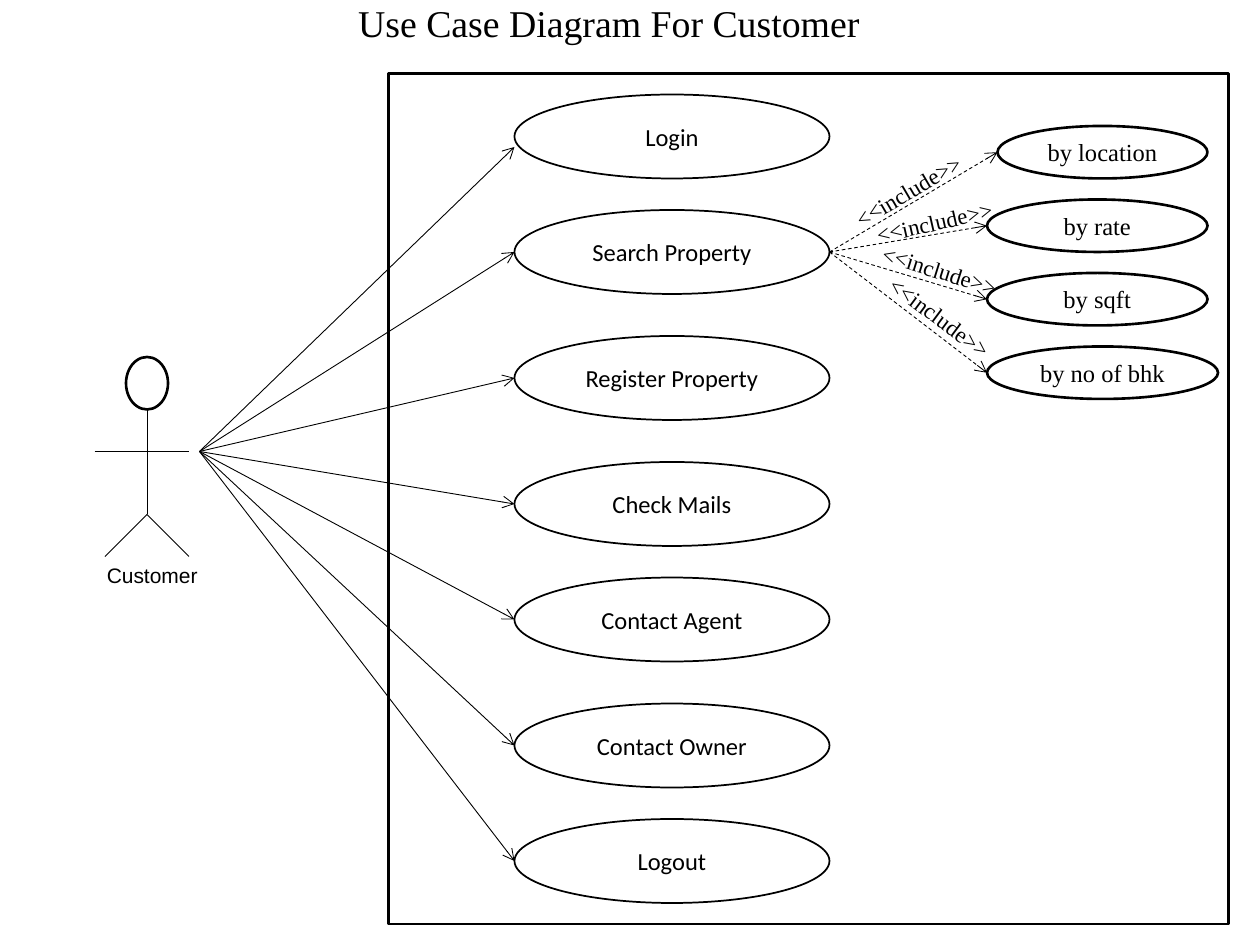
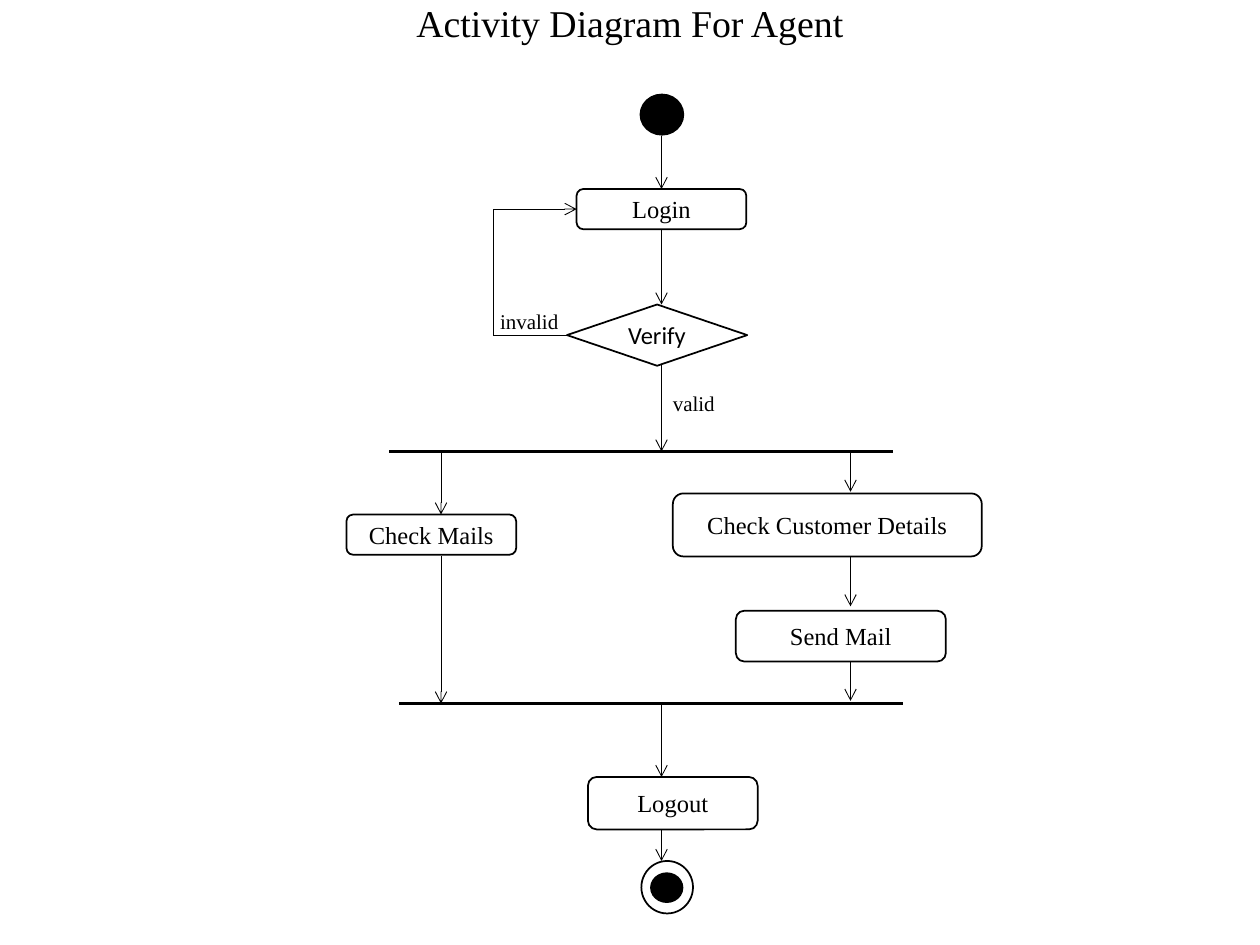
import pptx
import pptx.util
import pptx.dml.color
import pptx.enum.dml
import pptx.enum.shapes
import pptx.enum.text
import pptx.oxml.ns
from lxml import etree
from dataclasses import dataclass

Pt = pptx.util.Pt
Kind = pptx.enum.shapes.MSO_SHAPE
Align = pptx.enum.text.PP_ALIGN
Anchor = pptx.enum.text.MSO_ANCHOR
qn = pptx.oxml.ns.qn


@dataclass(frozen=True)
class Theme:
    ink: object = pptx.dml.color.RGBColor(0, 0, 0)
    paper: object = pptx.dml.color.RGBColor(255, 255, 255)
    serif: str = "Times New Roman"
    sans: str = "Calibri"
    plain: str = "Arial"
    title: float = 21.6
    body: float = 14
    link: float = 13
    small: float = 12
    hair: float = 0.5
    edge: float = 1
    bold: float = 1.5
    bar: float = 2


look = Theme()

# Use case content: name, top, offset of the arrow's end below the top
cases = [
    ("Login", 54, 30), ("Search Property", 120, 24),
    ("Register Property", 192, 24), ("Check Mails", 264, 24),
    ("Contact Agent", 330, 24), ("Contact Owner", 402, 24),
    ("Logout", 468, 24),
]
# Search options: name, left, width
modes = [("by location", 570, 120), ("by rate", 564, 126),
         ("by sqft", 564, 126), ("by no of bhk", 564, 132)]
# Include labels: left, top, width, turn
tags = [(477.5, 95, 92, -30.4), (493, 114.5, 90, -12.8),
        (496, 144, 88, 17.4), (496, 170.5, 84, 36.7)]
limbs = [(84, 234, 84, 294), (84, 294, 60, 318),
         (84, 294, 108, 318), (54, 258, 108, 258)]

# Activity content: name and box
steps = [
    ("Login", (329.5, 108, 97, 23)),
    ("Check Mails", (198, 294, 97, 23)),
    ("Check Customer Details", (384.5, 282, 176.5, 36)),
    ("Send Mail", (420.5, 349, 120, 29)),
    ("Logout", (336, 444, 97, 30)),
]
notes = [("invalid", (275, 175, 55, 17)), ("valid", (372, 222, 49, 17))]
bars = [(222.5, 258, 510.5, 258), (228, 402, 516, 402)]
# Vertical flows: x, start, end
flows = [(378, 208.5, 258), (252, 259, 294), (252, 318, 402),
         (486, 258, 281), (486, 318, 346.5), (486, 378, 400.5),
         (378, 402, 444), (378, 474, 492)]


# Shared helpers
def write(frame, text, font, size, align=Align.CENTER):
    para = frame.paragraphs[0]
    para.alignment = align
    run = para.add_run()
    run.text = text
    run.font.name = font
    run.font.size = Pt(size)
    run.font.color.rgb = look.ink
    return para


def start(deck, text, left):
    slide = deck.slides.add_slide(deck.slide_layouts[5])
    head = slide.shapes.title
    head.left, head.top, head.width, head.height = map(Pt, (left, 0, 648, 29))
    head.text_frame.vertical_anchor = Anchor.MIDDLE
    write(head.text_frame, text, look.serif, look.title).line_spacing = 0.9
    return slide


def shape(slide, kind, box, text="", font=look.serif, size=look.body,
          edge=look.edge, fill=look.paper):
    item = slide.shapes.add_shape(kind, *map(Pt, box))
    item.shadow.inherit = False
    if fill is None:
        item.fill.background()
    else:
        item.fill.solid()
        item.fill.fore_color.rgb = fill
    if edge:
        item.line.color.rgb = look.ink
        item.line.width = Pt(edge)
    else:
        item.line.fill.background()
    if text:
        frame = item.text_frame
        frame.margin_left = frame.margin_right = 0
        frame.margin_top = frame.margin_bottom = 0
        frame.vertical_anchor = Anchor.MIDDLE
        write(frame, text, font, size)
    return item


def line(slide, ends, width=look.hair, arrow=False, dash=False):
    item = slide.shapes.add_connector(
        pptx.enum.shapes.MSO_CONNECTOR.STRAIGHT, *map(Pt, ends))
    item.line.color.rgb = look.ink
    item.line.width = Pt(width)
    if dash:
        item.line.dash_style = pptx.enum.dml.MSO_LINE.DASH
    props = item._element.spPr
    if arrow:
        tail = etree.SubElement(props.find(qn("a:ln")), qn("a:tailEnd"))
        tail.set("type", "arrow")
    etree.SubElement(props, qn("a:effectLst"))
    return item


def label(slide, box, text, font, size, align, turn=0):
    item = slide.shapes.add_textbox(*map(Pt, box))
    item.rotation = turn
    item.text_frame.word_wrap = True
    item.text_frame.margin_right = Pt(0 if turn else 7.2)
    write(item.text_frame, text, font, size, align)


def draw_cases(deck):
    slide = start(deck, "Use Case Diagram For Customer", 24)

    # Actor
    shape(slide, Kind.OVAL, (72, 204, 24, 30), edge=look.bold)
    for ends in limbs:
        line(slide, ends)
    label(slide, (42, 318, 90, 22), "Customer", look.plain, look.small,
          Align.CENTER)

    # System frame and use cases
    shape(slide, Kind.RECTANGLE, (222, 42, 480, 486), edge=look.bold)
    for name, top, drop in cases:
        shape(slide, Kind.OVAL, (294, top, 180, 48), name, look.sans)
        line(slide, (114, 258, 294, top + drop), arrow=True)

    # Search options
    for row, (name, left, width) in enumerate(modes):
        top = 72 + 42 * row
        shape(slide, Kind.OVAL, (left, top, width, 30), name, edge=look.bold)
        line(slide, (474, 144, left, top + 15), arrow=True, dash=True)
    for left, top, width, turn in tags:
        label(slide, (left, top, width, 23), "<<include>>", look.serif,
              look.link, Align.LEFT, turn)


def draw_flow(deck):
    slide = start(deck, "Activity Diagram For Agent", 36)

    # Labels, steps and choice
    for name, box in notes:
        shape(slide, Kind.ROUNDED_RECTANGLE, box, name, size=look.small,
              edge=0)
    nodes = {name: shape(slide, Kind.ROUNDED_RECTANGLE, box, name)
             for name, box in steps}
    test = shape(slide, Kind.DIAMOND, (324, 174, 103, 35), "Verify",
                 look.sans)

    # Start and end marks
    shape(slide, Kind.OVAL, (366, 54, 24.5, 23), fill=look.ink)
    shape(slide, Kind.OVAL, (372, 499, 18, 16.5), fill=look.ink)
    shape(slide, Kind.OVAL, (366.5, 492, 29.5, 30), fill=None)

    # Fork and join bars, then flows
    for ends in bars:
        line(slide, ends, look.bar)
    for x, top, end in flows:
        line(slide, (x, top, x, end), arrow=True)

    # Flows joined to the login step, with the retry loop
    login = nodes["Login"]
    line(slide, (378, 78, 378, 108), arrow=True).end_connect(login, 0)
    line(slide, (378, 131, 378, 174), arrow=True).begin_connect(login, 2)
    line(slide, (324, 191.5, 282, 191.5)).begin_connect(test, 1)
    line(slide, (282, 191.5, 282, 119.5))
    line(slide, (282, 119.5, 329.5, 119.5), arrow=True).end_connect(login, 1)


def main():
    deck = pptx.Presentation()
    deck.slide_width, deck.slide_height = Pt(720), Pt(540)
    draw_cases(deck)
    draw_flow(deck)
    deck.save("out.pptx")


if __name__ == "__main__":
    main()
